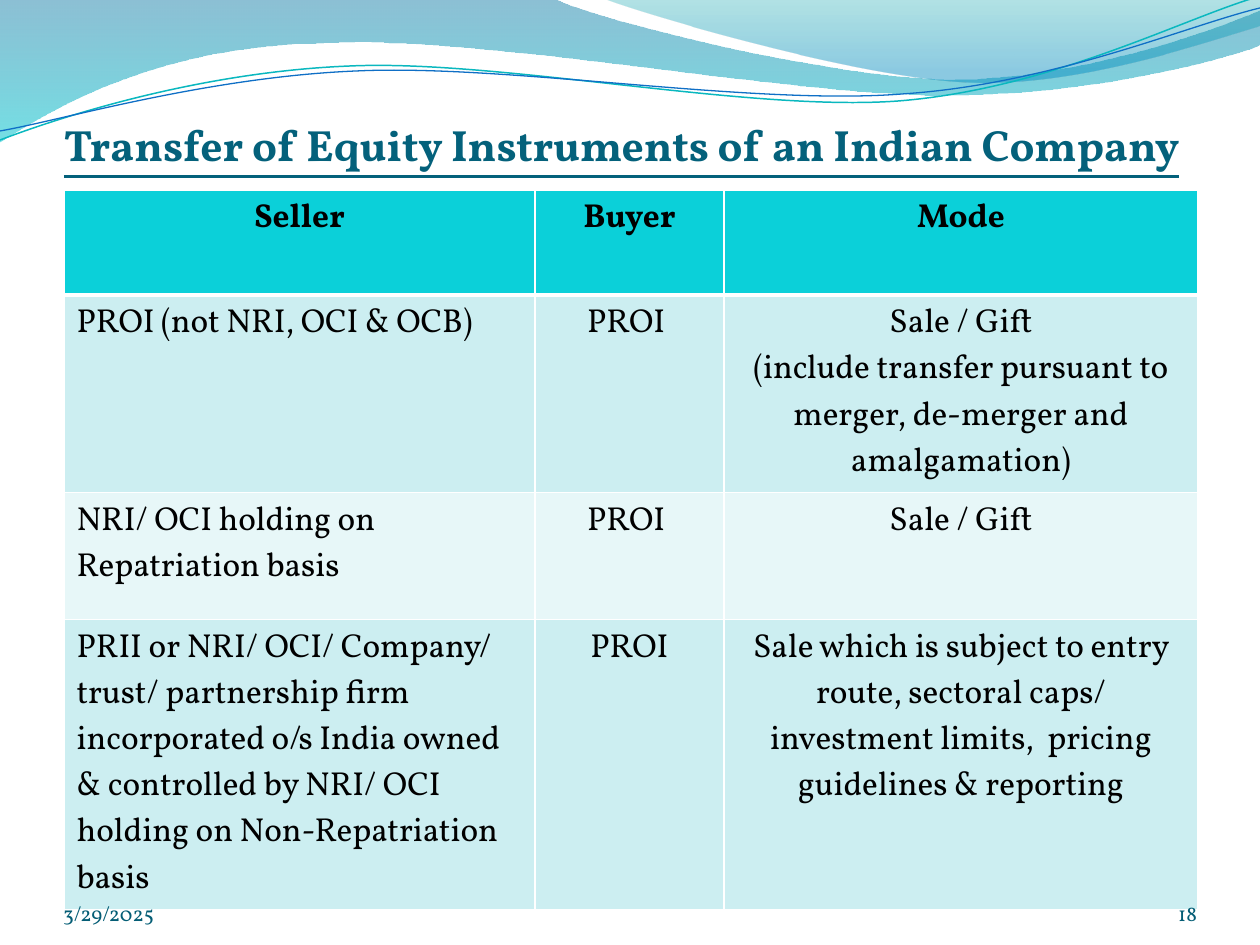
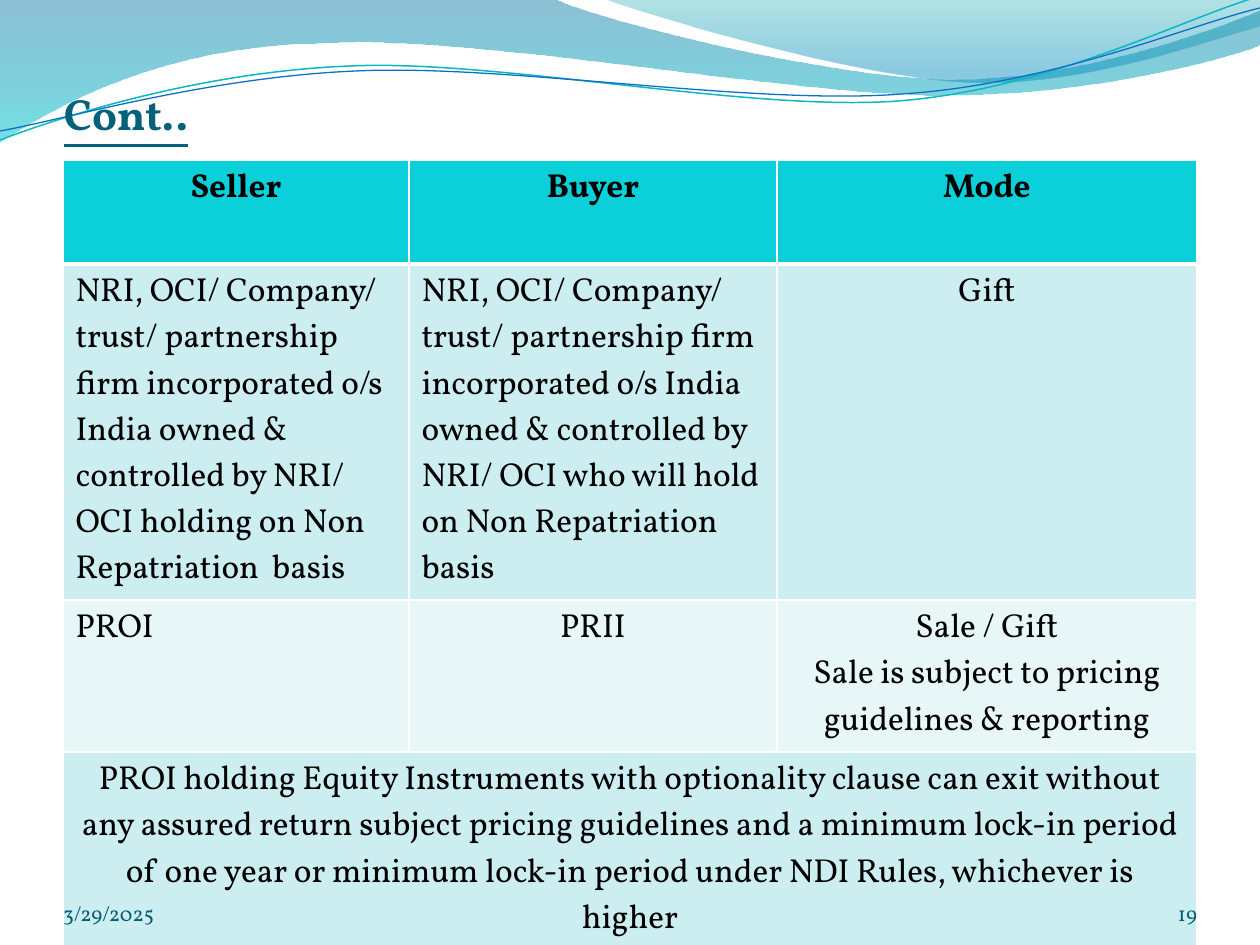
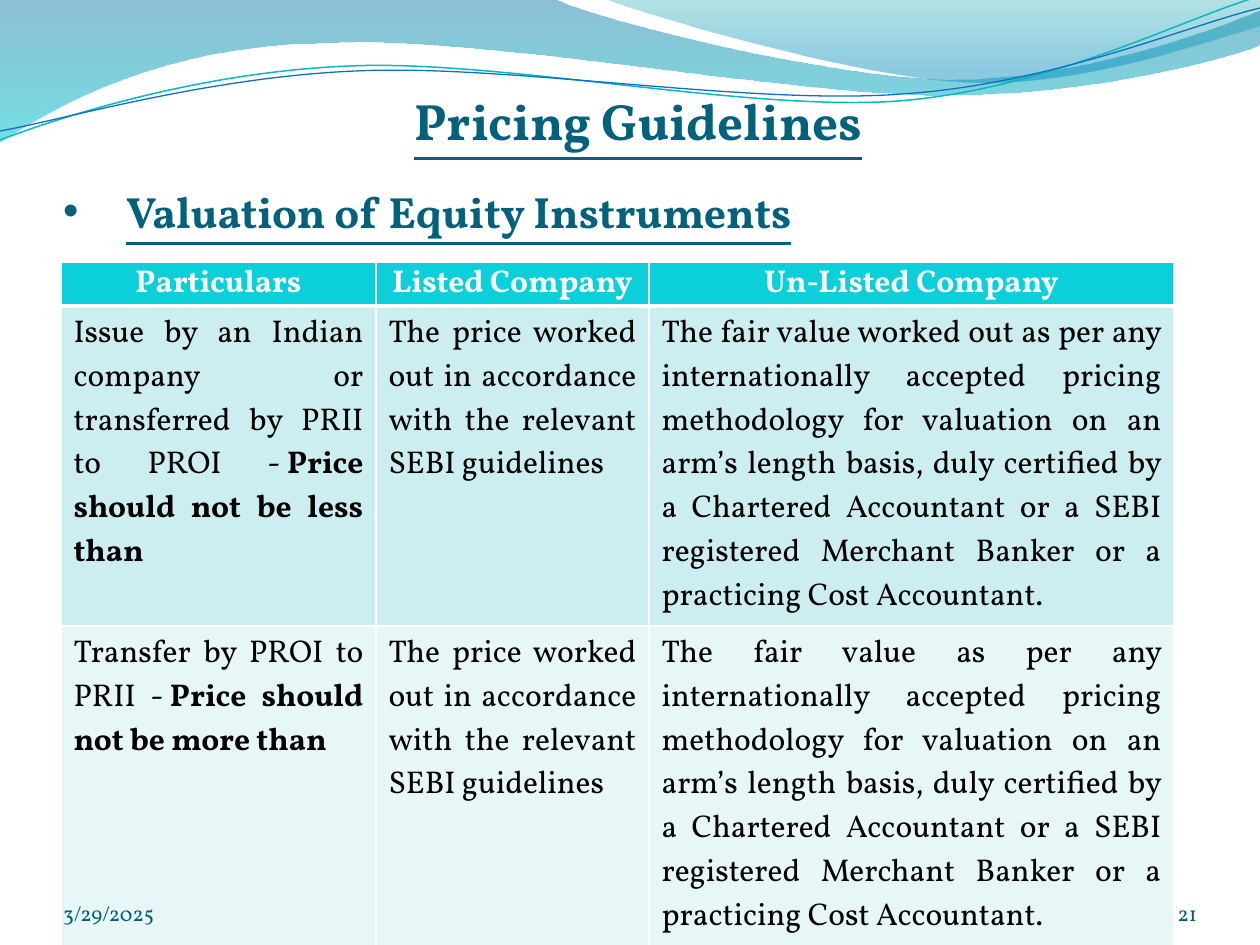
"""Build three slides on transfer and pricing of equity instruments."""
from dataclasses import dataclass

from lxml import etree
from pptx import Presentation
from pptx.dml.color import RGBColor
from pptx.enum.text import MSO_ANCHOR, MSO_AUTO_SIZE, PP_ALIGN
from pptx.oxml.ns import qn
from pptx.util import Emu, Pt

LEFT, CENTER, RIGHT, JUSTIFY = PP_ALIGN.LEFT, PP_ALIGN.CENTER, PP_ALIGN.RIGHT, PP_ALIGN.JUSTIFY
MIDDLE, BOTTOM = MSO_ANCHOR.MIDDLE, MSO_ANCHOR.BOTTOM
NO_AUTOFIT = MSO_AUTO_SIZE.NONE
PIXELS_PER_INCH = 126
SLIDE_WIDTH, SLIDE_HEIGHT = 1260, 945
TITLE_ONLY = 5
NO_BREAK_SPACE = chr(160)


@dataclass(frozen=True)
class Theme:
    """Colours, type sizes and line widths of the deck."""
    font: str = "Vollkorn"
    bullet_font: str = "Arial"
    title: str = "04617B"
    footer: str = "045D75"
    text: str = "000000"
    white: str = "FFFFFF"
    header_fill: str = "0BD0D9"
    row_fills: tuple = ("CCEEF1", "E7F7F8")
    wide_band: tuple = ((0, "0074A1", 45), (1, "00C6CF", 55))
    right_band: tuple = ((0, "00A1A9", 30), (0.8, "008BBF", 45))
    teal_wave: str = "0AB8BF"
    blue_wave: str = "0F6FC6"
    title_size: float = 25
    heading_size: float = 29.2
    table_size: float = 19
    pricing_size: float = 18
    footer_size: float = 12
    teal_width: float = 0.85
    blue_width: float = 0.75
    border: float = 1
    heavy_border: float = 3


@dataclass(frozen=True)
class CellText:
    """Text of one table cell, with an optional bold ending."""
    text: str
    alignment: PP_ALIGN = CENTER
    bold_text: str = ""


WIDE_BAND = [(0, 0), (554, -1), (600, 21, 837, 79, 955, 79), (1075, 79, 1207, 33, 1260, 11),
             (1261, 45), (1239, 55, 1096, 96, 940, 95), (784, 95, 481, 35, 324, 43),
             (163, 45, 58, 105, -1, 142)]
RIGHT_BAND = [(604, -1), (641, 14, 859, 78, 969, 82), (1079, 87, 1211, 40, 1260, 26), (1260, 0)]
TEAL_WAVE = [(0, 140), (60, 117, 199, 72, 349, 66), (498, 59, 747, 112, 898, 101),
             (1050, 89, 1182, 19, 1257, -3)]
BLUE_WAVE = [(0, 131), (59, 121, 207, 77, 357, 71), (508, 64, 752, 106, 903, 94),
             (1053, 84, 1186, 26, 1260, 8)]


def px(length):
    """Turn a length in px into EMU."""
    return Emu(round(length * 914400 / PIXELS_PER_INCH))


def rgb(colour):
    """Turn a hex string into a colour."""
    return RGBColor.from_string(colour)


def set_values(target, values):
    """Set each attribute named in a dict."""
    for name, value in values.items():
        setattr(target, name, value)


def curve(shape, segments):
    """Join the three points of each six-number segment into a cubic curve."""
    lines = iter(list(shape.element.spPr.iter(qn("a:lnTo"))))
    for segment in segments:
        line = next(lines)
        if len(segment) == 6:
            line.tag = qn("a:cubicBezTo")
            for _ in range(2):
                control = next(lines)
                control.getparent().remove(control)
                line.append(control[0])


class Deck:
    """Holds the style and the current slide."""

    def __init__(self, theme):
        """Start an empty presentation."""
        self.theme = theme
        self.presentation = Presentation()
        self.presentation.slide_width = px(SLIDE_WIDTH)
        self.presentation.slide_height = px(SLIDE_HEIGHT)
        self.layout = self.presentation.slide_layouts[TITLE_ONLY]
        self.slide = None

    def new_slide(self):
        """Add a slide; the first one also supplies the layout's waves."""
        self.slide = self.presentation.slides.add_slide(self.layout)
        if len(self.presentation.slides) == 1:
            self.decorate_layout()

    def decorate_layout(self):
        """Draw the bands and waves and hand them to the layout."""
        theme = self.theme
        shapes = [self.band(WIDE_BAND, theme.wide_band),
                  self.band(RIGHT_BAND, theme.right_band),
                  self.wave(TEAL_WAVE, theme.teal_wave, theme.teal_width),
                  self.wave(BLUE_WAVE, theme.blue_wave, theme.blue_width)]
        for number, shape in enumerate(shapes, 20):
            shape.element.nvSpPr.cNvPr.set("id", str(number))
            self.layout.shapes.element.append(shape.element)

    def outline(self, segments, close):
        """Add a freeform of straight and curved segments."""
        start, *rest = segments
        points = [(px(x), px(y)) for segment in rest
                  for x, y in zip(segment[::2], segment[1::2])]
        builder = self.slide.shapes.build_freeform(*map(px, start))
        builder.add_line_segments(points, close=close)
        shape = builder.convert_to_shape()
        shape.shadow.inherit = False
        curve(shape, rest)
        return shape

    def band(self, segments, stops):
        """Add a closed band with a translucent vertical gradient."""
        shape = self.outline(segments, True)
        shape.line.fill.background()
        shape.fill.gradient()
        shape.fill.gradient_angle = 270
        for stop, (position, colour, _) in zip(shape.fill.gradient_stops, stops):
            stop.position = position
            stop.color.rgb = rgb(colour)
        colours = shape.element.spPr.iter(qn("a:srgbClr"))
        for element, (_, _, opacity) in zip(list(colours), stops):
            etree.SubElement(element, qn("a:alpha"), val=str(opacity * 1000))
        return shape

    def wave(self, segments, colour, width):
        """Add an open wavy line."""
        shape = self.outline(segments, False)
        shape.fill.background()
        shape.line.color.rgb = rgb(colour)
        shape.line.width = Pt(width)
        return shape

    def run(self, paragraph, text, colour, **values):
        """Add a run in the deck's font."""
        run = paragraph.add_run()
        run.text = text
        set_values(run.font, {"name": self.theme.font, **values})
        run.font.color.rgb = rgb(colour)

    def fill_text(self, shape, box, text, colour, alignment, top_inset=0, **values):
        """Place a text shape and write its single paragraph."""
        set_values(shape, dict(zip(("left", "top", "width", "height"), map(px, box))))
        frame = shape.text_frame
        set_values(frame, {"word_wrap": True, "auto_size": NO_AUTOFIT, "vertical_anchor": BOTTOM,
                           "margin_left": 0, "margin_right": 0, "margin_bottom": 0,
                           "margin_top": px(top_inset)})
        paragraph = frame.paragraphs[0]
        paragraph.alignment = alignment
        self.run(paragraph, text, colour, **values)
        return paragraph

    def text_box(self, box, text, colour, alignment, **values):
        """Add a text box."""
        shape = self.slide.shapes.add_textbox(0, 0, 0, 0)
        self.fill_text(shape, box, text, colour, alignment, **values)

    def title(self, box, text, bullet=False):
        """Format the title placeholder."""
        paragraph = self.fill_text(self.slide.shapes.title, box, text, self.theme.title, LEFT,
                                   top_inset=6, size=Pt(self.theme.title_size),
                                   bold=True, underline=True)
        if bullet:
            properties = paragraph._p.get_or_add_pPr()
            properties.set("marL", str(px(63)))
            properties.set("indent", str(px(-63)))
            etree.SubElement(properties, qn("a:buFont"), typeface=self.theme.bullet_font)
            etree.SubElement(properties, qn("a:buChar"), char="•")

    def heading(self, box, text):
        """Add a centred heading above the title."""
        self.text_box(box, text, self.theme.title, CENTER, top_inset=6,
                      size=Pt(self.theme.heading_size), bold=True, underline=True)

    def footer(self, number):
        """Add the date and the slide number."""
        size = Pt(self.theme.footer_size)
        self.text_box((63, 876, 294, 50), "3/29/2025", self.theme.footer, LEFT, size=size)
        self.text_box((1092, 876, 105, 50), str(number), self.theme.footer, RIGHT, size=size)

    def borders(self, cell, row_index):
        """Draw white cell borders, heavy under the header."""
        theme = self.theme
        widths = {"a:lnL": theme.border, "a:lnR": theme.border,
                  "a:lnT": theme.heavy_border if row_index == 1 else theme.border,
                  "a:lnB": theme.heavy_border if row_index == 0 else theme.border}
        properties = cell._tc.get_or_add_tcPr()
        for position, (tag, width) in enumerate(widths.items()):
            line = etree.Element(qn(tag), w=str(Pt(width)))
            fill = etree.SubElement(line, qn("a:solidFill"))
            etree.SubElement(fill, qn("a:srgbClr"), val=theme.white)
            properties.insert(position, line)

    def write_cell(self, cell, content, colour, size, bold):
        """Write a cell's lines in one paragraph."""
        paragraph = cell.text_frame.paragraphs[0]
        paragraph.alignment = content.alignment
        for index, line in enumerate(content.text.split("\n")):
            if index:
                paragraph.add_line_break()
            self.run(paragraph, line, colour, size=size, bold=bold)
        if content.bold_text:
            self.run(paragraph, content.bold_text, colour, size=size, bold=True)

    def table(self, position, widths, heights, header, body, size, header_colour,
              header_format=None):
        """Add a banded table; a short row spans the whole width."""
        theme = self.theme
        frame = self.slide.shapes.add_table(len(heights), len(widths), *map(px, position),
                                            px(sum(widths)), px(sum(heights)))
        table = frame.table
        set_values(table, {"first_row": False, "horz_banding": False})
        for column, width in zip(table.columns, widths):
            column.width = px(width)
        for row, height in zip(table.rows, heights):
            row.height = px(height)
        rows = [[CellText(text) for text in header], *body]
        for row_index, contents in enumerate(rows):
            is_header = row_index == 0
            fill = theme.header_fill if is_header else theme.row_fills[(row_index - 1) % 2]
            for column_index in range(len(widths)):
                cell = table.cell(row_index, column_index)
                cell.fill.solid()
                cell.fill.fore_color.rgb = rgb(fill)
                self.borders(cell, row_index)
            for column_index, content in enumerate(contents):
                cell = table.cell(row_index, column_index)
                if is_header:
                    set_values(cell, header_format or {})
                self.write_cell(cell, content, header_colour if is_header else theme.text,
                                Pt(size), is_header)
            if len(contents) < len(widths):
                table.cell(row_index, 0).merge(table.cell(row_index, len(widths) - 1))


TRANSFER_HEADER = ("Seller", "Buyer", "Mode")
TRANSFER_ROWS = [
    [CellText("PROI (not NRI, OCI & OCB)", LEFT), CellText("PROI "),
     CellText("Sale / Gift\n(include transfer pursuant to merger, de-merger and amalgamation)")],
    [CellText("NRI/ OCI holding on Repatriation basis", LEFT), CellText("PROI "),
     CellText("Sale / Gift")],
    [CellText("PRII or NRI/ OCI/ Company/ trust/ partnership firm incorporated o/s India owned "
              "& controlled by NRI/ OCI holding on Non-Repatriation basis", LEFT),
     CellText("PROI"),
     CellText("Sale which is subject to entry route, sectoral caps/ investment limits,  pricing "
              "guidelines & reporting")],
]
OVERSEAS_ENTITY = ("NRI, OCI/ Company/ trust/ partnership firm incorporated o/s India owned "
                   "& controlled by NRI/ OCI ")
NON_REPATRIATION = "on Non Repatriation  basis"
CONTINUED_ROWS = [
    [CellText(OVERSEAS_ENTITY + "holding " + NON_REPATRIATION, LEFT),
     CellText(OVERSEAS_ENTITY + "who will hold " + NON_REPATRIATION, LEFT),
     CellText("Gift")],
    [CellText("PROI", LEFT), CellText("PRII"),
     CellText("Sale / Gift\nSale is subject to pricing guidelines & reporting")],
    [CellText("PROI holding Equity Instruments with optionality clause can exit without any "
              "assured return subject pricing guidelines and a minimum lock-in period of one "
              "year or minimum lock-in period under NDI Rules, whichever is higher")],
]
LISTED_PRICE = CellText("The price worked out in accordance with the relevant SEBI guidelines",
                        JUSTIFY)
FAIR_VALUE = ("as per any internationally accepted pricing methodology for valuation on an "
              "arm’s length basis, duly certified by a Chartered Accountant or a SEBI "
              "registered Merchant Banker or a practicing Cost Accountant.")
PRICING_HEADER = ("Particulars", "Listed Company", "Un-Listed Company")
PRICING_ROWS = [
    [CellText("Issue by an Indian company or transferred by PRII to PROI -" + NO_BREAK_SPACE,
              JUSTIFY, "Price should not be less than"),
     LISTED_PRICE, CellText("The fair value worked out " + FAIR_VALUE, JUSTIFY)],
    [CellText("Transfer by PROI to PRII -" + NO_BREAK_SPACE, JUSTIFY,
              "Price should not be more than"),
     LISTED_PRICE, CellText("The fair value " + FAIR_VALUE, JUSTIFY)],
]


def main():
    """Build and save the deck."""
    theme = Theme()
    deck = Deck(theme)

    deck.new_slide()
    deck.table((64, 190), (471, 189, 474), (105, 197, 127, 290), TRANSFER_HEADER,
               TRANSFER_ROWS, theme.table_size, theme.text)
    deck.title((64, 83, 1134, 87), "Transfer of Equity Instruments of an Indian Company")
    deck.footer(18)

    deck.new_slide()
    deck.table((63, 160), (346, 368, 420), (104, 335, 152, 197), TRANSFER_HEADER,
               CONTINUED_ROWS, theme.table_size, theme.text)
    deck.title((64, 52, 1134, 87), "Cont..")
    deck.footer(19)

    deck.new_slide()
    deck.title((63, 160, 1147, 77), "Valuation of Equity Instruments", bullet=True)
    deck.table((61, 262), (315, 273, 525), (43, 320, 320), PRICING_HEADER, PRICING_ROWS,
               theme.pricing_size, theme.white,
               {"vertical_anchor": MIDDLE, "margin_left": px(4), "margin_right": px(4),
                "margin_top": 0, "margin_bottom": 0})
    deck.footer(21)
    deck.heading((71, 74, 1134, 77), "Pricing Guidelines")

    deck.presentation.save("out.pptx")


if __name__ == "__main__":
    main()
